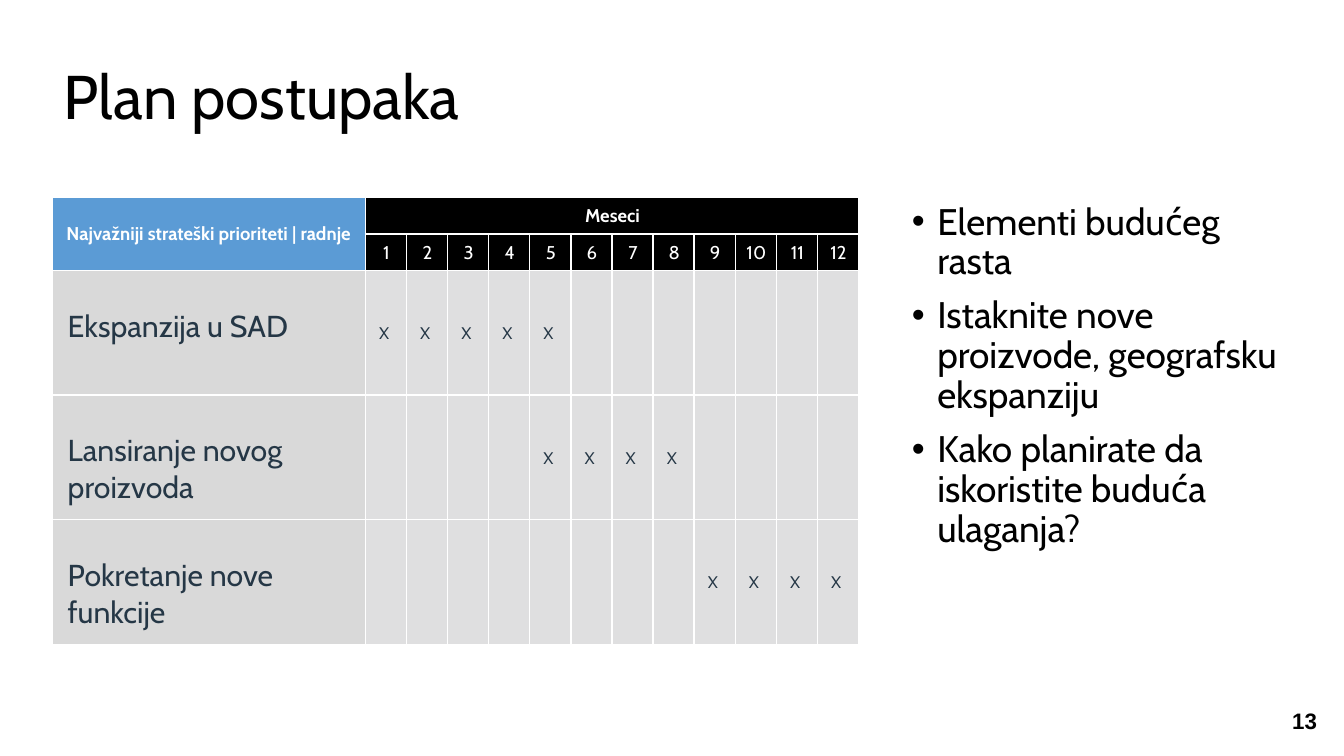
from pptx import Presentation
from pptx.dml.color import RGBColor
from pptx.enum.text import MSO_ANCHOR as Anchor, PP_ALIGN as Align
from pptx.oxml.ns import qn
from pptx.util import Inches, Pt
from lxml.etree import SubElement

BLACK = RGBColor(0x00, 0x00, 0x00)
WHITE = RGBColor(0xFF, 0xFF, 0xFF)
NAVY = RGBColor(0x25, 0x37, 0x46)
BLUE = RGBColor(0x5B, 0x9B, 0xD5)
LABEL_GRAY = RGBColor(0xD9, 0xD9, 0xD9)
MONTH_GRAY = RGBColor(0xDF, 0xDF, 0xE0)

MONTHS = range(1, 13)
PRIORITIES = [
    ("Ekspanzija u SAD", range(1, 6)),
    ("Lansiranje novog proizvoda", range(5, 9)),
    ("Pokretanje nove funkcije", range(9, 13)),
]
POINTS = [
    "Elementi budućeg rasta",
    "Istaknite nove proizvode, geografsku ekspanziju",
    "Kako planirate da iskoristite buduća ulaganja?",
]


def write_text(paragraph, text, size, color=BLACK, font="Cabin", bold=False,
               align=Align.LEFT, line_spacing=1.0, space_before=0):
    paragraph.alignment = align
    paragraph.line_spacing = line_spacing
    paragraph.space_before = Pt(space_before)
    run = paragraph.add_run()
    run.text = text
    run.font.size = Pt(size)
    run.font.name = font
    run.font.bold = bold
    run.font.color.rgb = color


def add_bullet(paragraph, indent):
    properties = paragraph._p.get_or_add_pPr()
    properties.set("marL", str(Inches(indent)))
    properties.set("indent", str(-Inches(indent)))
    SubElement(properties, qn("a:buFont"), typeface="Arial")
    SubElement(properties, qn("a:buChar"), char="•")


def add_borders(cell, color, width):
    properties = cell._tc.get_or_add_tcPr()
    for side in ("lnL", "lnR", "lnT", "lnB"):
        line = SubElement(properties, qn(f"a:{side}"), w=str(Pt(width)))
        fill = SubElement(line, qn("a:solidFill"))
        SubElement(fill, qn("a:srgbClr"), val=str(color))


class PlanSlide:
    HEADER = {"size": 11, "color": WHITE, "align": Align.CENTER}
    LABEL = {"size": 18, "color": NAVY}
    MARK = {"size": 10, "color": NAVY, "align": Align.CENTER}
    HEADER_MARGINS = (0.01, 0.06, 0, 0.06)
    LABEL_MARGINS = (0.13, 0.31, 0.01, 0)
    MARK_MARGINS = (0.01, 0.01, 0.04, 0)

    def __init__(self, presentation):
        self.slide = presentation.slides.add_slide(presentation.slide_layouts[6])

    def text_box(self, box, texts, anchor=Anchor.TOP, margins=(0.1, 0.05, 0.1, 0.05),
                 bullet_indent=None, **style):
        frame = self.slide.shapes.add_textbox(*map(Inches, box)).text_frame
        frame.word_wrap = True
        frame.vertical_anchor = anchor
        (frame.margin_left, frame.margin_top,
         frame.margin_right, frame.margin_bottom) = map(Inches, margins)
        for index, text in enumerate(texts):
            paragraph = frame.add_paragraph() if index else frame.paragraphs[0]
            write_text(paragraph, text, **style)
            if bullet_indent:
                add_bullet(paragraph, bullet_indent)

    def cell(self, cell, text, fill, margins, anchor=Anchor.MIDDLE, **style):
        add_borders(cell, WHITE, 1)
        cell.fill.solid()
        cell.fill.fore_color.rgb = fill
        cell.vertical_anchor = anchor
        (cell.margin_left, cell.margin_top,
         cell.margin_right, cell.margin_bottom) = map(Inches, margins)
        write_text(cell.text_frame.paragraphs[0], text, **style)

    def schedule(self, box):
        row_heights = [0.3, 0.3] + [1.03] * len(PRIORITIES)
        column_widths = [2.59] + [0.34] * len(MONTHS)
        table = self.slide.shapes.add_table(
            len(row_heights), len(column_widths), *map(Inches, box)).table
        table.first_row = table.horz_banding = False
        for row, height in zip(table.rows, row_heights):
            row.height = Inches(height)
        for column, width in zip(table.columns, column_widths):
            column.width = Inches(width)

        table.cell(0, 0).merge(table.cell(1, 0))
        table.cell(0, 1).merge(table.cell(0, len(MONTHS)))
        self.cell(table.cell(0, 0), "Najvažniji strateški prioriteti | radnje", BLUE,
                  (0.12, 0.06, 0, 0.06), size=11, color=WHITE, bold=True)
        self.cell(table.cell(0, 1), "Meseci", BLACK, self.HEADER_MARGINS,
                  bold=True, **self.HEADER)
        for month in MONTHS:
            self.cell(table.cell(1, month), str(month), BLACK,
                      self.HEADER_MARGINS, **self.HEADER)

        for row, (priority, active_months) in enumerate(PRIORITIES, start=2):
            self.cell(table.cell(row, 0), priority, LABEL_GRAY, self.LABEL_MARGINS,
                      anchor=Anchor.TOP, **self.LABEL)
            for month in MONTHS:
                mark = "X" if month in active_months else ""
                self.cell(table.cell(row, month), mark, MONTH_GRAY,
                          self.MARK_MARGINS, **self.MARK)


def main():
    presentation = Presentation()
    presentation.slide_width = Inches(11.11)
    presentation.slide_height = Inches(6.25)
    plan = PlanSlide(presentation)
    plan.text_box((10.46, 5.86, 0.65, 0.21), ["13"], anchor=Anchor.BOTTOM,
                  margins=(0, 0, 0, 0), size=13.3, font="Arial", bold=True,
                  align=Align.CENTER)
    plan.text_box((7.44, 1.63, 3.23, 3.92), POINTS, bullet_indent=0.21,
                  size=22, line_spacing=0.9, space_before=8.3)
    plan.text_box((0.43, 0.32, 9.41, 1.01), ["Plan postupaka"],
                  anchor=Anchor.MIDDLE, size=36.7, line_spacing=0.9)
    plan.schedule((0.43, 1.63, 6.66, 3.71))
    presentation.save("out.pptx")


if __name__ == "__main__":
    main()
